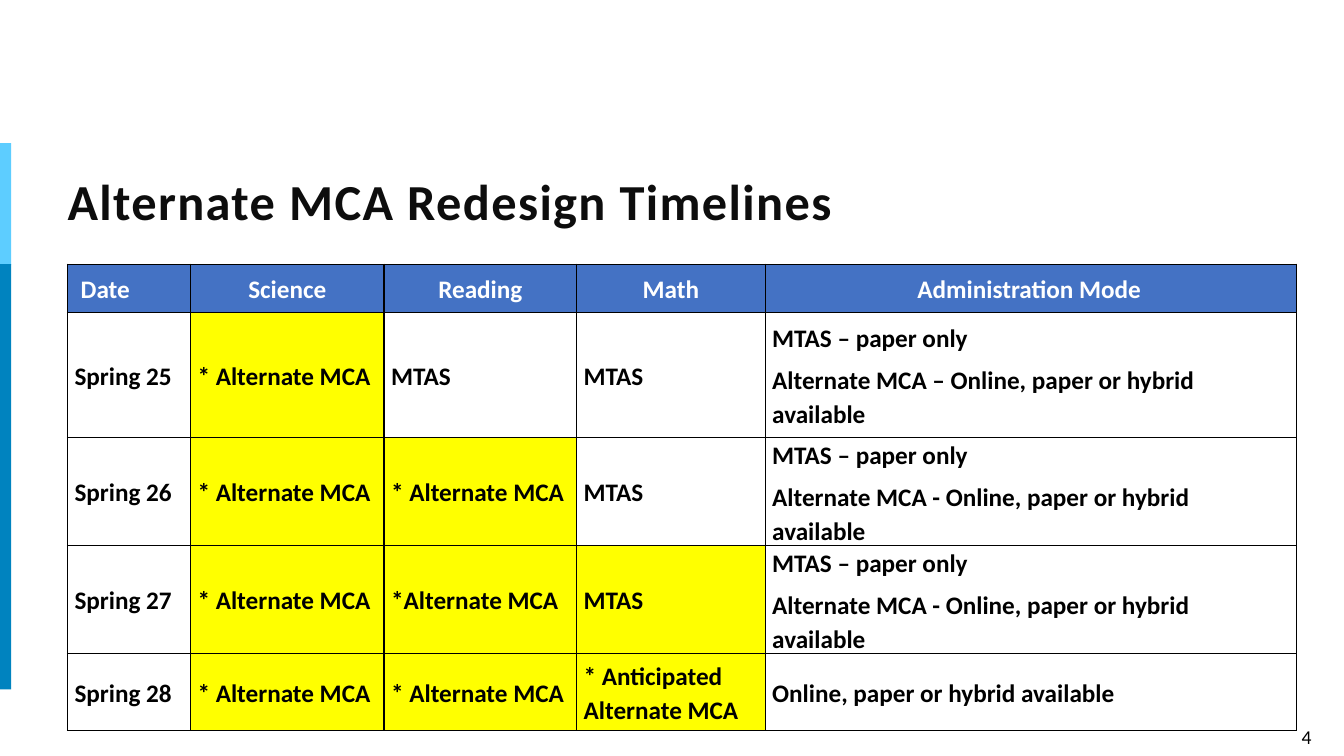
"""Build the Alternate MCA redesign timeline slide."""
from dataclasses import dataclass
from typing import Any

from lxml import etree
from pptx import Presentation
from pptx import util as u
from pptx.dml import color
from pptx.enum import shapes, text
from pptx.oxml import ns

SCALE = 9144
FONT = "Calibri"
COLORS = {
    "white": "FFFFFF", "black": "000000", "title": "0D0D0D", "header": "4472C4",
    "done": "FFFF00", "light": "5DCDFF", "dark": "0083BF",
}
COLS = (122, 192, 191, 187, 527)
ROWS = (48, 124, 85, 85, 76)
ALT = "* Alternate MCA"
PAPER = "MTAS – paper only\n"
ONLINE = "Online, paper or hybrid available"
TIMELINE = (
    ("Date", "Science", "Reading", "Math", "Administration Mode"),
    ("Spring 25", ALT, "MTAS", "MTAS", f"{PAPER}Alternate MCA – {ONLINE}"),
    ("Spring 26", ALT, ALT, "MTAS", f"{PAPER}Alternate MCA - {ONLINE}"),
    ("Spring 27", ALT, "*Alternate MCA", "MTAS", f"{PAPER}Alternate MCA - {ONLINE}"),
    ("Spring 28", ALT, ALT, "* Anticipated Alternate MCA", ONLINE),
)


def px(n: int) -> u.Emu:
    return u.Emu(n * SCALE)


def rgb(name: str) -> color.RGBColor:
    return color.RGBColor.from_string(COLORS[name])


@dataclass
class Box:
    x: int
    y: int
    w: int
    h: int

    def emu(self) -> tuple[u.Emu, ...]:
        return px(self.x), px(self.y), px(self.w), px(self.h)


@dataclass
class Panel:
    box: Box
    fill: str = ""
    line: str = ""
    words: str = ""


PANELS = (
    Panel(Box(1263, 714, 66, 34), line="white", words="4"),
    Panel(Box(-3, 142, 14, 121), fill="light"),
    Panel(Box(-3, 262, 14, 422), fill="dark"),
)


def apply(target: Any, values: dict[str, Any]) -> None:
    for name, value in values.items():
        setattr(target, name, value)


def write(tf: Any, words: str, size: int, ink: str, bold: bool, para: dict[str, Any]) -> None:
    tf.text = words
    for p in tf.paragraphs:
        apply(p, para)
        for r in p.runs:
            apply(r.font, {"name": FONT, "size": u.Pt(size), "bold": bold})
            r.font.color.rgb = rgb(ink)


def draw_panel(s: Any, panel: Panel) -> None:
    sp = s.shapes.add_shape(shapes.MSO_SHAPE.RECTANGLE, *panel.box.emu())
    sp.shadow.inherit = False
    for paint, name in ((sp.fill, panel.fill), (sp.line.fill, panel.line)):
        if name:
            paint.solid()
            paint.fore_color.rgb = rgb(name)
        else:
            paint.background()
    if panel.words:
        sp.line.width = u.Pt(0.75)
        apply(sp.text_frame, {"vertical_anchor": text.MSO_ANCHOR.TOP, "word_wrap": True,
                              "auto_size": text.MSO_AUTO_SIZE.SHAPE_TO_FIT_TEXT})
        write(sp.text_frame, panel.words, 14, "black", False,
              {"alignment": text.PP_ALIGN.CENTER})


def draw_title(s: Any) -> None:
    tf = s.shapes.add_textbox(*Box(67, 127, 1201, 129).emu()).text_frame
    apply(tf, {"word_wrap": True, "vertical_anchor": text.MSO_ANCHOR.MIDDLE,
               "margin_left": 0, "margin_top": px(20), "margin_right": px(10),
               "margin_bottom": px(5)})
    write(tf, "Alternate MCA Redesign Timelines", 36, "title", True, {})
    tf.paragraphs[0].runs[0].font._element.set("spc", "100")


def add_borders(cell: Any) -> None:
    tc_pr = cell._tc.get_or_add_tcPr()
    for side in ("lnL", "lnR", "lnT", "lnB"):
        ln = etree.SubElement(tc_pr, ns.qn(f"a:{side}"), w=str(u.Pt(1)))
        fill = etree.SubElement(ln, ns.qn("a:solidFill"))
        etree.SubElement(fill, ns.qn("a:srgbClr"), val=COLORS["black"])


def draw_cell(cell: Any, row: int, col: int, words: str) -> None:
    header = row == 0
    done = 1 <= col <= min(row, 3)
    indent = 13 if header and col == 0 else 7
    outdent = 10 if col == len(COLS) - 1 else 7
    apply(cell, {"vertical_anchor": text.MSO_ANCHOR.MIDDLE, "margin_left": px(indent),
                 "margin_right": px(outdent), "margin_top": 0, "margin_bottom": 0})
    add_borders(cell)
    cell.fill.solid()
    cell.fill.fore_color.rgb = rgb("header" if header else "done" if done else "white")
    centred = header and col > 0
    align = text.PP_ALIGN.CENTER if centred else text.PP_ALIGN.LEFT
    write(cell.text_frame, words, 18, "white" if header else "black", True,
          {"alignment": align, "line_spacing": 1.1, "space_before": u.Pt(6)})


def draw_timeline(s: Any) -> None:
    box = Box(67, 262, sum(COLS), sum(ROWS))
    table = s.shapes.add_table(len(ROWS), len(COLS), *box.emu()).table
    table.horz_banding = False
    for column, width in zip(table.columns, COLS):
        column.width = px(width)
    for row, height in enumerate(ROWS):
        table.rows[row].height = px(height)
        for col, words in enumerate(TIMELINE[row]):
            draw_cell(table.cell(row, col), row, col, words)


def main() -> None:
    prs = Presentation()
    apply(prs, {"slide_width": px(1333), "slide_height": px(750)})
    s = prs.slides.add_slide(prs.slide_layouts[6])
    for panel in PANELS:
        draw_panel(s, panel)
    draw_title(s)
    draw_timeline(s)
    prs.save("out.pptx")


if __name__ == "__main__":
    main()
